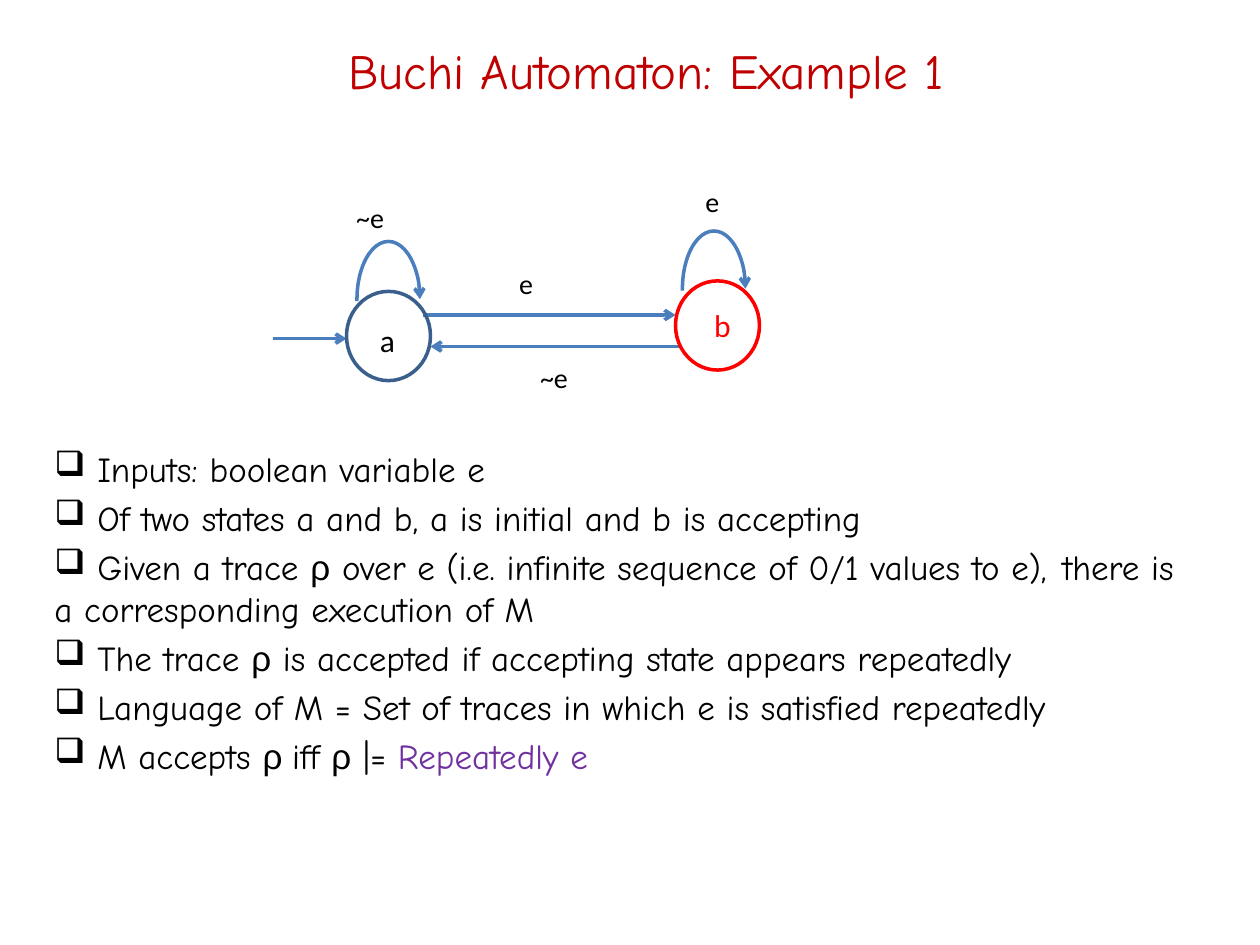
from lxml import etree
from pptx import Presentation
from pptx.dml.color import RGBColor
from pptx.enum.shapes import MSO_CONNECTOR, MSO_SHAPE
from pptx.enum.text import MSO_ANCHOR, PP_ALIGN
from pptx.oxml.ns import qn
from pptx.util import Pt

STRAIGHT = MSO_CONNECTOR.STRAIGHT
ELLIPSE, ARC = MSO_SHAPE.OVAL, MSO_SHAPE.ARC
LEFT, CENTER = PP_ALIGN.LEFT, PP_ALIGN.CENTER
TOP, MIDDLE = MSO_ANCHOR.TOP, MSO_ANCHOR.MIDDLE


def color(hex_string):
    return RGBColor.from_string(hex_string)


def add_run(paragraph, text, font="Calibri", size=16, fill="000000"):
    run = paragraph.add_run()
    run.text = text
    run.font.name = font
    run.font.size = Pt(size)
    run.font.color.rgb = color(fill)


def add_bullet(paragraph, character):
    properties = paragraph._p.get_or_add_pPr()
    properties.set("marL", "0")
    properties.set("indent", "0")
    etree.SubElement(properties, qn("a:buChar")).set("char", character)


class AutomatonSlide:
    TEXT_FONT = "Comic Neue"
    SYMBOL_FONT = "Arial"
    BLACK, TITLE, ACCENT = "000000", "C00000", "7030A0"
    EDGE, INITIAL, ACCEPTING = "4B7EBC", "3A5F8C", "FF0000"
    LINE_WIDTH = 2
    STATE_SIZE = (48, 51)
    LOOP_SIZE = (36, 66)

    def __init__(self, presentation):
        self.slide = presentation.slides.add_slide(presentation.slide_layouts[6])

    def text_box(self, left, top, width, height, wrap=True, anchor=TOP):
        box = self.slide.shapes.add_textbox(Pt(left), Pt(top), Pt(width), Pt(height))
        box.text_frame.word_wrap = wrap
        box.text_frame.vertical_anchor = anchor
        return box.text_frame

    def text(self, text, *place, align=LEFT, wrap=True, anchor=TOP, **style):
        paragraph = self.text_box(*place, wrap=wrap, anchor=anchor).paragraphs[0]
        paragraph.alignment = align
        add_run(paragraph, text, **style)

    def bullets(self, items, *place):
        frame = self.text_box(*place)
        for index, item in enumerate(items):
            paragraph = frame.add_paragraph() if index else frame.paragraphs[0]
            paragraph.space_before = Pt(4)
            add_bullet(paragraph, "❑")
            for text, font, fill in item:
                add_run(paragraph, text, font=font, size=20, fill=fill)

    def style_line(self, shape, fill, arrow=False):
        shape.line.color.rgb = color(fill)
        shape.line.width = Pt(self.LINE_WIDTH)
        if arrow:
            line = shape.line._get_or_add_ln()
            etree.SubElement(line, qn("a:tailEnd")).set("type", "arrow")

    def outline(self, kind, left, top, size, fill, arrow=False):
        width, height = size
        shape = self.slide.shapes.add_shape(kind, Pt(left), Pt(top), Pt(width), Pt(height))
        shape.fill.background()
        self.style_line(shape, fill, arrow)
        shape.shadow.inherit = False
        return shape

    def state(self, name, left, top, label_left, label_top, line, fill):
        self.outline(ELLIPSE, left, top, self.STATE_SIZE, line)
        self.text(name, label_left, label_top, 17.5, 29, size=18, fill=fill)

    def loop(self, left, top):
        arc = self.outline(ARC, left, top, self.LOOP_SIZE, self.EDGE, arrow=True)
        arc.adjustments[0] = 105.92
        arc.adjustments[1] = 0

    def transition(self, start, end, y):
        connector = self.slide.shapes.add_connector(STRAIGHT, Pt(start), Pt(y), Pt(end), Pt(y))
        self.style_line(connector, self.EDGE, arrow=True)
        etree.SubElement(connector._element.spPr, qn("a:effectLst"))

    def label(self, text, left, top, width):
        self.text(text, left, top, width, 26.5, wrap=False)


def main():
    presentation = Presentation()
    presentation.slide_width, presentation.slide_height = Pt(720), Pt(540)
    page = AutomatonSlide(presentation)

    # Title
    page.text("Buchi Automaton: Example 1", 54, 12, 630, 56, align=CENTER,
              anchor=MIDDLE, font=page.TEXT_FONT, size=28, fill=page.TITLE)

    # Transitions, including the arrow into the initial state
    for start, end, y in ((156, 198, 193.5), (242, 386, 180), (390, 246, 198)):
        page.transition(start, end, y)

    # States and their self-loops
    page.state("a", 198, 166.5, 210, 180, page.INITIAL, page.BLACK)
    page.state("b", 386, 160.5, 401, 171.5, page.ACCEPTING, page.ACCEPTING)
    page.loop(204, 138)
    page.loop(390, 132)

    # Transition labels
    page.label("~e", 196.5, 111, 31)
    page.label("e", 289.5, 148.5, 26)
    page.label("~e", 301.5, 202.5, 34.5)
    page.label("e", 396, 102, 22)

    # Explanation
    def plain(text):
        return text, page.TEXT_FONT, page.BLACK

    def symbol(text):
        return text, page.SYMBOL_FONT, page.BLACK

    page.bullets([
        [plain(" Inputs: boolean variable e")],
        [plain(" Of two states a and b, a is initial and b is accepting")],
        [plain(" Given a trace "), symbol("ρ"),
         plain(" over e (i.e. infinite sequence of 0/1 values to e), "
               "\tthere is a corresponding execution of M")],
        [plain(" The trace "), symbol("ρ"),
         plain(" is accepted if accepting state appears repeatedly")],
        [plain(" Language of M = Set of traces in which e is satisfied repeatedly")],
        [plain(" M accepts "), symbol("ρ "), plain("iff "), symbol("ρ"), plain(" |= "),
         ("Repeatedly e", page.TEXT_FONT, page.ACCENT)],
    ], 24, 252, 654, 210)

    presentation.save("out.pptx")


if __name__ == "__main__":
    main()
